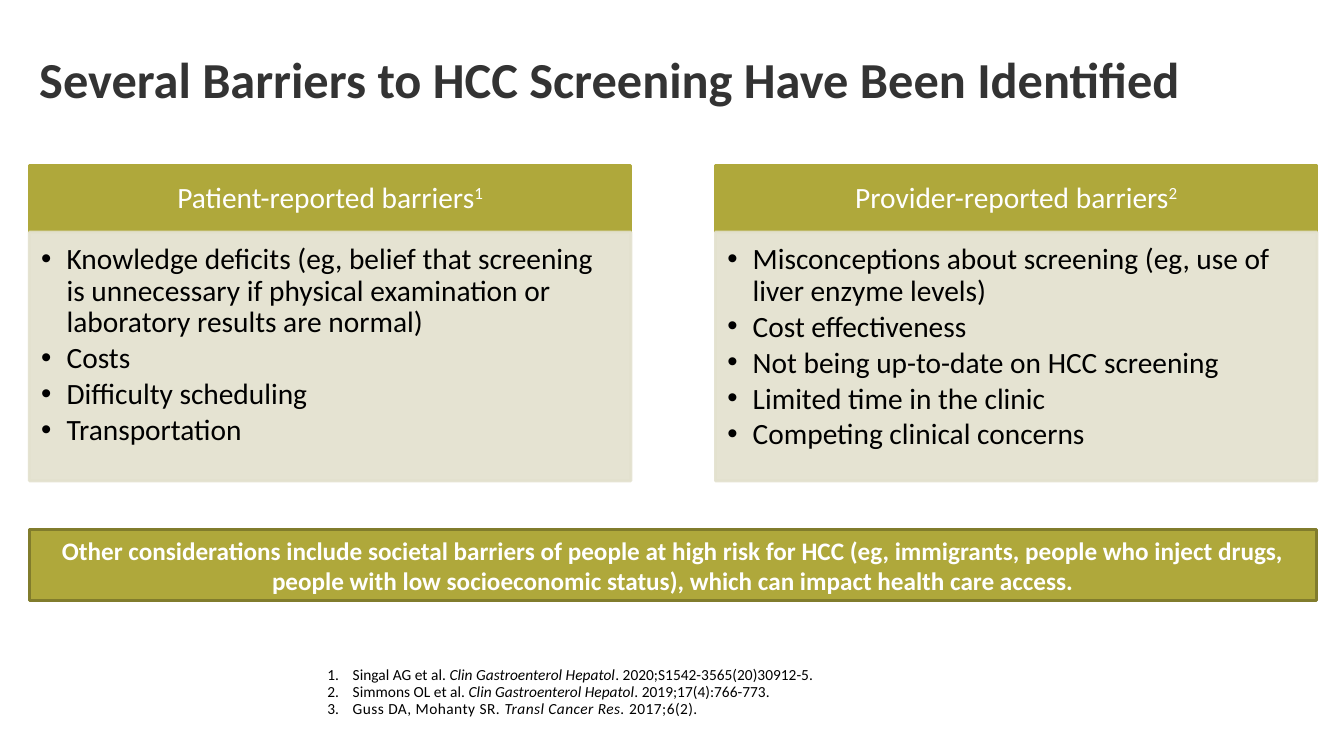
import pptx
import pptx.util
import pptx.dml.color
import pptx.enum.shapes
import pptx.enum.text
import pptx.oxml.ns
import lxml.etree

Cm, Pt = pptx.util.Cm, pptx.util.Pt
ALIGN, ANCHOR = pptx.enum.text.PP_ALIGN, pptx.enum.text.MSO_ANCHOR
COLORS = {"olive": "AFA83B", "dark olive": "817C2C", "sand": "E3E1CE",
          "title": "333333", "black": "000000", "white": "FFFFFF"}
SIDES = ("left", "top", "right", "bottom")


def rgb(name):
    return pptx.dml.color.RGBColor.from_string(COLORS[name])


def add_xml(parent, tag, **attributes):
    return lxml.etree.SubElement(parent, pptx.oxml.ns.qn(tag), attributes)


class SlideBuilder:
    font_name = "Calibri"
    indent = Cm(0.64)

    def __init__(self, presentation):
        self.slide = presentation.slides.add_slide(presentation.slide_layouts[6])

    def text(self, shape, paragraphs, size, color, bold=False, anchor=ANCHOR.TOP,
             margins=(0.25, 0.13, 0.25, 0.13), bullet=None, **paragraph_format):
        """Each paragraph is a list of (text, run attributes) pairs."""
        frame = shape.text_frame
        frame.word_wrap = True
        frame.vertical_anchor = anchor
        for side, margin in zip(SIDES, margins):
            setattr(frame, "margin_" + side, Cm(margin))
        for index, runs in enumerate(paragraphs):
            paragraph = frame.add_paragraph() if index else frame.paragraphs[0]
            if bullet:
                self.bullet(paragraph, bullet)
            for name, value in {"alignment": ALIGN.LEFT, **paragraph_format}.items():
                setattr(paragraph, name, value)
            for words, attributes in runs:
                run = paragraph.add_run()
                run.text = words
                font = {"name": self.font_name, "size": Pt(size), "bold": bold}
                for name, value in font.items():
                    setattr(run.font, name, value)
                run.font.color.rgb = rgb(color)
                for name, value in attributes.items():
                    run.font._element.set(name, value)

    def bullet(self, paragraph, bullet):
        properties = paragraph._p.get_or_add_pPr()
        properties.set("marL", str(self.indent))
        properties.set("indent", str(-self.indent))
        if bullet == "number":
            add_xml(properties, "a:buFont", typeface="+mj-lt")
            add_xml(properties, "a:buAutoNum", type="arabicPeriod")
        else:
            add_xml(properties, "a:buFont", typeface="Arial")
            add_xml(properties, "a:buChar", char=bullet)

    def text_box(self, place, paragraphs, **style):
        shape = self.slide.shapes.add_textbox(*map(Cm, place))
        self.text(shape, paragraphs, **style)

    def panel(self, place, fill, line, paragraphs, opacity=None, **style):
        shape = self.slide.shapes.add_shape(
            pptx.enum.shapes.MSO_SHAPE.RECTANGLE, *map(Cm, place))
        shape.shadow.inherit = False
        shape.fill.solid()
        shape.fill.fore_color.rgb = rgb(fill)
        shape.line.color.rgb = rgb(line)
        shape.line.width = Pt(2)
        if opacity:
            for color in shape._element.spPr.iter(pptx.oxml.ns.qn("a:srgbClr")):
                add_xml(color, "a:alpha", val=str(opacity * 1000))
        self.text(shape, paragraphs, **style)


BARRIERS = [
    ("Patient-reported barriers", "1", [
        "Knowledge deficits (eg, belief that screening is unnecessary if physical "
        "examination or laboratory results are normal)",
        "Costs", "Difficulty scheduling", "Transportation"]),
    ("Provider-reported barriers", "2", [
        "Misconceptions about screening (eg, use of liver enzyme levels)",
        "Cost effectiveness", "Not being up-to-date on HCC screening",
        "Limited time in the clinic", "Competing clinical concerns"]),
]
REFERENCES = [
    ("Singal AG et al. ", "Clin Gastroenterol Hepatol", ". 2020;S1542-3565(20)30912-5.", {}),
    ("Simmons OL et al. ", "Clin Gastroenterol Hepatol", ". 2019;17(4):766-773.", {}),
    ("Guss DA, Mohanty SR. ", "Transl Cancer Res. ", "2017;6(2).", {"spc": "30"}),
]
LEFT, COLUMN_WIDTH, COLUMN_STEP = 0.74, 15.16, 17.29
HEADER_TOP, HEADER_HEIGHT, LIST_HEIGHT = 4.17, 1.68, 6.27


def main():
    presentation = pptx.Presentation()
    presentation.slide_width, presentation.slide_height = Cm(33.87), Cm(19.05)
    builder = SlideBuilder(presentation)

    # Title
    builder.text_box((LEFT, 0.48, 32.46, 3.18),
                     [[("Several Barriers to HCC Screening Have Been Identified", {})]],
                     size=36, color="title", bold=True, anchor=ANCHOR.MIDDLE,
                     line_spacing=0.9)

    # Two columns: header and list
    for column, (heading, note, barriers) in enumerate(BARRIERS):
        left = LEFT + column * COLUMN_STEP
        builder.panel((left, HEADER_TOP, COLUMN_WIDTH, HEADER_HEIGHT), "olive", "olive",
                      [[(heading, {}), (note, {"baseline": "30000"})]],
                      size=21, color="white", anchor=ANCHOR.MIDDLE,
                      margins=(0.41, 0.23, 0.41, 0.23),
                      alignment=ALIGN.CENTER, line_spacing=0.9)
        builder.panel((left, HEADER_TOP + HEADER_HEIGHT, COLUMN_WIDTH, LIST_HEIGHT),
                      "sand", "sand", [[(barrier, {})] for barrier in barriers],
                      opacity=90, size=21, color="black", bullet="•",
                      margins=(0.3, 0.3, 0.41, 0.46),
                      line_spacing=0.9, space_after=Pt(3))

    # References
    builder.text_box((8, 16.69, 25.2, 2.03),
                     [[(authors, spacing), (journal, {"i": "1", **spacing}),
                       (issue, spacing)]
                      for authors, journal, issue, spacing in REFERENCES],
                     size=11, color="black", bullet="number", line_spacing=0.9)

    # Closing statement
    builder.panel((LEFT, 13.34, 32.44, 1.8), "olive", "dark olive",
                  [[("Other considerations include societal barriers of people at high "
                     "risk for HCC (eg, immigrants, people who inject drugs, people with "
                     "low socioeconomic status), which can impact health care access.", {})]],
                  size=18, color="white", bold=True, anchor=ANCHOR.MIDDLE,
                  alignment=ALIGN.CENTER)

    presentation.save("out.pptx")


if __name__ == "__main__":
    main()
